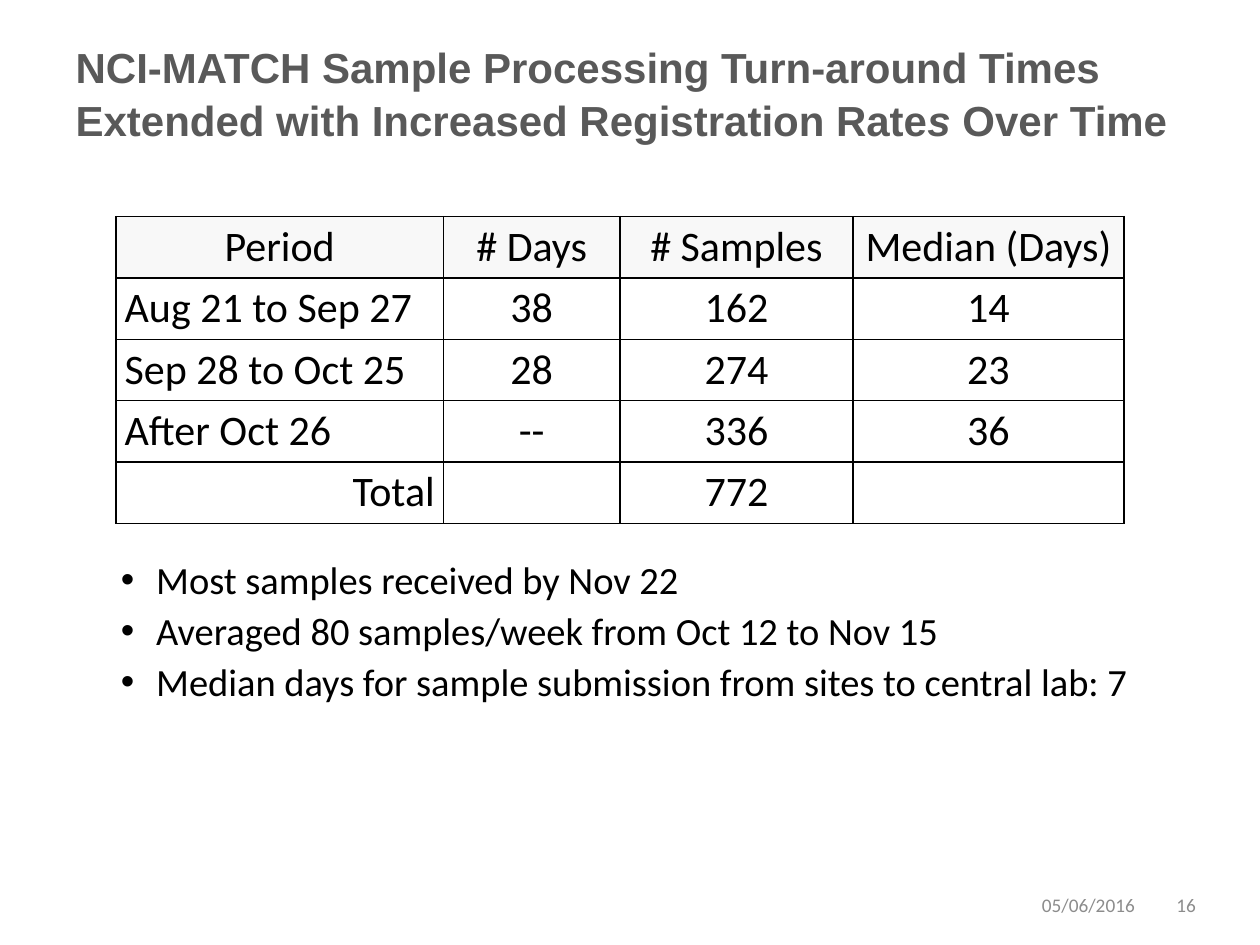
"""Builds the slide on sample processing turn-around times."""
from lxml.etree import SubElement
from pptx import Presentation
from pptx.dml.color import RGBColor
from pptx.enum.text import MSO_ANCHOR, MSO_AUTO_SIZE, PP_ALIGN
from pptx.oxml.ns import qn
from pptx.util import Inches, Pt

BLACK = RGBColor(0x00, 0x00, 0x00)
DARK = RGBColor(0x59, 0x59, 0x59)
GREY = RGBColor(0x8C, 0x8C, 0x8C)
PALE = RGBColor(0xF8, 0xF8, 0xF8)

TITLE = [
    ("NCI-MATCH Sample Processing Turn-around Times "
     "Extended with Increased Registration Rate", False),
    ("s", True),
    (" Over Time", False),
]
ROWS = [
    ("Period", "# Days", "# Samples", "Median (Days)"),
    ("Aug 21 to Sep 27", "38", "162", "14"),
    ("Sep 28 to Oct 25", "28", "274", "23"),
    ("After Oct 26", "--", "336", "36"),
    ("Total", "", "772", ""),
]
WIDTHS = [2.6, 1.4, 1.85, 2.15]
HIGH = 0.48
POINTS = [
    "Most samples received by Nov 22",
    "Averaged 80 samples/week from Oct 12 to Nov 15",
    "Median days for sample submission from sites to central lab: 7",
]
FOOTER = [
    ("16", 9.19, 0.4, PP_ALIGN.RIGHT),
    ("05/06/2016", 8.17, 1.1, PP_ALIGN.LEFT),
]


def style(para, size, color, align=PP_ALIGN.LEFT, name="Calibri", bold=False):
    para.alignment = align
    font = para.font
    font.name, font.size, font.bold = name, Pt(size), bold
    font.color.rgb = color


def place(shape, left, top, width, height):
    shape.left, shape.top = Inches(left), Inches(top)
    shape.width, shape.height = Inches(width), Inches(height)


def border(cell):
    props = cell._tc.get_or_add_tcPr()
    for i, side in enumerate(("lnL", "lnR", "lnT", "lnB")):
        line = props.makeelement(qn(f"a:{side}"), {"w": str(Pt(1))})
        fill = SubElement(line, qn("a:solidFill"))
        SubElement(fill, qn("a:srgbClr"), val=str(BLACK))
        props.insert(i, line)


def add_title(slide):
    title = slide.shapes.title
    place(title, 0.5, 0.42, 9, 0.62)
    frame = title.text_frame
    frame.auto_size = MSO_AUTO_SIZE.NONE
    frame.vertical_anchor = MSO_ANCHOR.MIDDLE
    para = frame.paragraphs[0]
    for text, slant in TITLE:
        run = para.add_run()
        run.text = text
        if slant:
            run.font.italic = True
    para.line_spacing = 1.06
    style(para, 24, DARK, name="Arial", bold=True)


def add_grid(slide):
    table = slide.shapes.add_table(
        len(ROWS), len(WIDTHS), Inches(0.92), Inches(1.72),
        Inches(sum(WIDTHS)), Inches(HIGH * len(ROWS))).table
    for col, width in zip(table.columns, WIDTHS):
        col.width = Inches(width)
    for r, row in enumerate(ROWS):
        table.rows[r].height = Inches(HIGH)
        for c, text in enumerate(row):
            cell = table.cell(r, c)
            cell.text = text
            cell.margin_left = cell.margin_right = Inches(0.07)
            cell.margin_top = cell.margin_bottom = Inches(0.04)
            if r == 0:
                cell.fill.solid()
                cell.fill.fore_color.rgb = PALE
            else:
                cell.fill.background()
            border(cell)
            align = PP_ALIGN.CENTER
            if c == 0 and r > 0:
                align = PP_ALIGN.RIGHT if text == "Total" else PP_ALIGN.LEFT
            style(cell.text_frame.paragraphs[0], 24, BLACK, align)


def add_points(slide):
    body = slide.placeholders[1]
    place(body, 0.86, 4.33, 8.27, 1.32)
    frame = body.text_frame
    frame.auto_size = MSO_AUTO_SIZE.NONE
    frame.text = "\n".join(POINTS)
    for para in frame.paragraphs:
        para.line_spacing = 1.1
        para.space_before = Pt(0)
        props = para._p.get_or_add_pPr()
        props.set("marL", str(Inches(0.28)))
        props.set("indent", str(Inches(-0.28)))
        SubElement(props, qn("a:buFont"), typeface="Arial")
        SubElement(props, qn("a:buChar"), char="•")
        style(para, 22, BLACK)


def add_footer(slide):
    for text, left, width, align in FOOTER:
        box = slide.shapes.add_textbox(
            Inches(left), Inches(6.98), Inches(width), Inches(0.4))
        frame = box.text_frame
        frame.word_wrap = True
        frame.vertical_anchor = MSO_ANCHOR.MIDDLE
        frame.text = text
        style(frame.paragraphs[0], 11, GREY, align)


def main():
    deck = Presentation()
    deck.slide_width, deck.slide_height = Inches(10), Inches(7.5)
    slide = deck.slides.add_slide(deck.slide_layouts[1])
    add_title(slide)
    add_grid(slide)
    add_points(slide)
    add_footer(slide)
    deck.save("out.pptx")


if __name__ == "__main__":
    main()
